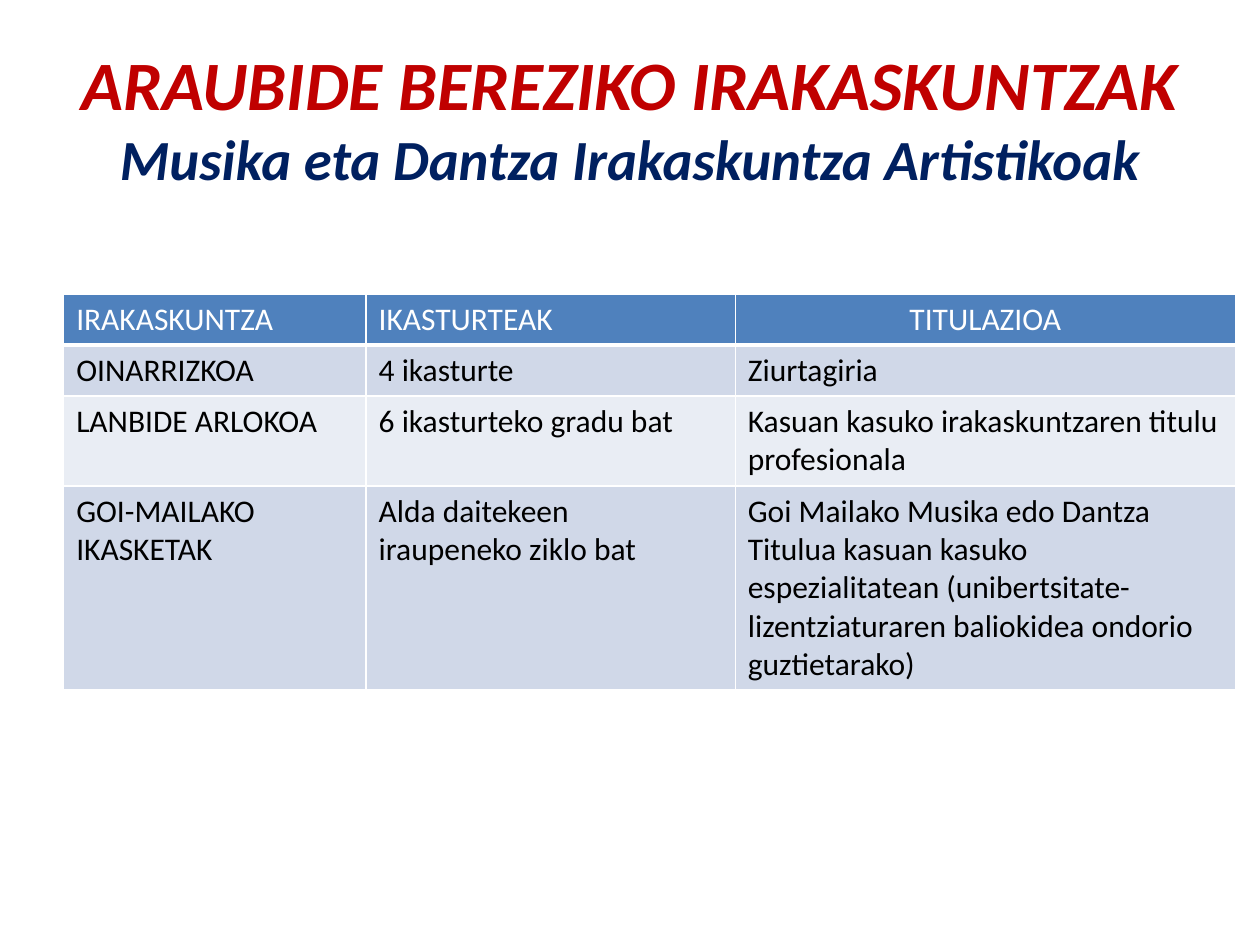
from lxml import etree
from pptx import Presentation
from pptx.dml.color import RGBColor
from pptx.enum.text import MSO_ANCHOR, PP_ALIGN
from pptx.oxml.ns import qn
from pptx.util import Pt

CENTER, LEFT = PP_ALIGN.CENTER, PP_ALIGN.LEFT
MIDDLE = MSO_ANCHOR.MIDDLE
FONT = "Calibri"
COLORS = {
    "red": "C00000", "navy": "002060", "white": "FFFFFF", "black": "000000",
    "header": "4F81BD", "band_dark": "D0D8E8", "band_light": "E9EDF4",
}

# Content: each cell is a list of paragraphs
TITLE = [
    ("ARAUBIDE BEREZIKO IRAKASKUNTZAK", 39.6, "red"),
    ("Musika eta Dantza Irakaskuntza Artistikoak", 32.4, "navy"),
]
ROWS = [
    [["IRAKASKUNTZA"], ["IKASTURTEAK"], ["TITULAZIOA"]],
    [["OINARRIZKOA"], ["4 ikasturte"], ["Ziurtagiria"]],
    [["LANBIDE ARLOKOA"], ["6 ikasturteko gradu bat"],
     ["Kasuan kasuko irakaskuntzaren titulu profesionala"]],
    [["GOI-MAILAKO", "IKASKETAK"],
     ["Alda daitekeen", "iraupeneko ziklo bat"],
     ["Goi Mailako Musika edo Dantza",
      "Titulua kasuan kasuko espezialitatean (unibertsitate-lizentziaturaren "
      "baliokidea ondorio guztietarako)"]],
]
COL_WIDTHS = [172.8, 210.96, 285.84]
ROW_HEIGHTS = [29.2, 29.2, 51.2, 116.8]


def add_run(p, text, size, color):
    r = p.add_run()
    r.text = text
    r.font.name = FONT
    r.font.size = Pt(size)
    r.font.color.rgb = RGBColor.from_string(COLORS[color])
    return r


def set_borders(cell, bottom):
    tc_pr = cell._tc.get_or_add_tcPr()
    for side, width in (("L", 1), ("R", 1), ("T", 1), ("B", bottom)):
        ln = etree.SubElement(tc_pr, qn(f"a:ln{side}"), w=str(Pt(width)))
        fill = etree.SubElement(ln, qn("a:solidFill"))
        etree.SubElement(fill, qn("a:srgbClr"), val=COLORS["white"])


prs = Presentation()
prs.slide_width, prs.slide_height = Pt(720), Pt(540)
s = prs.slides.add_slide(prs.slide_layouts[6])

# Title: two lines in one paragraph
tf = s.shapes.add_textbox(Pt(36), Pt(21.6), Pt(648), Pt(90)).text_frame
tf.word_wrap = True
tf.vertical_anchor = MIDDLE
p = tf.paragraphs[0]
p.alignment = CENTER
for i, (text, size, color) in enumerate(TITLE):
    if i:
        p.add_line_break()
    r = add_run(p, text, size, color)
    r.font.bold = r.font.italic = True

# Table
table = s.shapes.add_table(len(ROWS), len(COL_WIDTHS), Pt(36.4), Pt(168),
                           Pt(sum(COL_WIDTHS)), Pt(sum(ROW_HEIGHTS))).table
for col, width in zip(table.columns, COL_WIDTHS):
    col.width = Pt(width)
for row, height in zip(table.rows, ROW_HEIGHTS):
    row.height = Pt(height)

for i, row in enumerate(ROWS):
    is_header = i == 0
    fill = "header" if is_header else "band_dark" if i % 2 else "band_light"
    for j, paragraphs in enumerate(row):
        cell = table.cell(i, j)
        set_borders(cell, bottom=3 if is_header else 1)
        cell.fill.solid()
        cell.fill.fore_color.rgb = RGBColor.from_string(COLORS[fill])
        tf = cell.text_frame
        for k, text in enumerate(paragraphs):
            p = tf.add_paragraph() if k else tf.paragraphs[0]
            p.alignment = CENTER if is_header and j == 2 else LEFT
            r = add_run(p, text, 18, "white" if is_header else "black")
            r.font.bold = False

prs.save("out.pptx")
